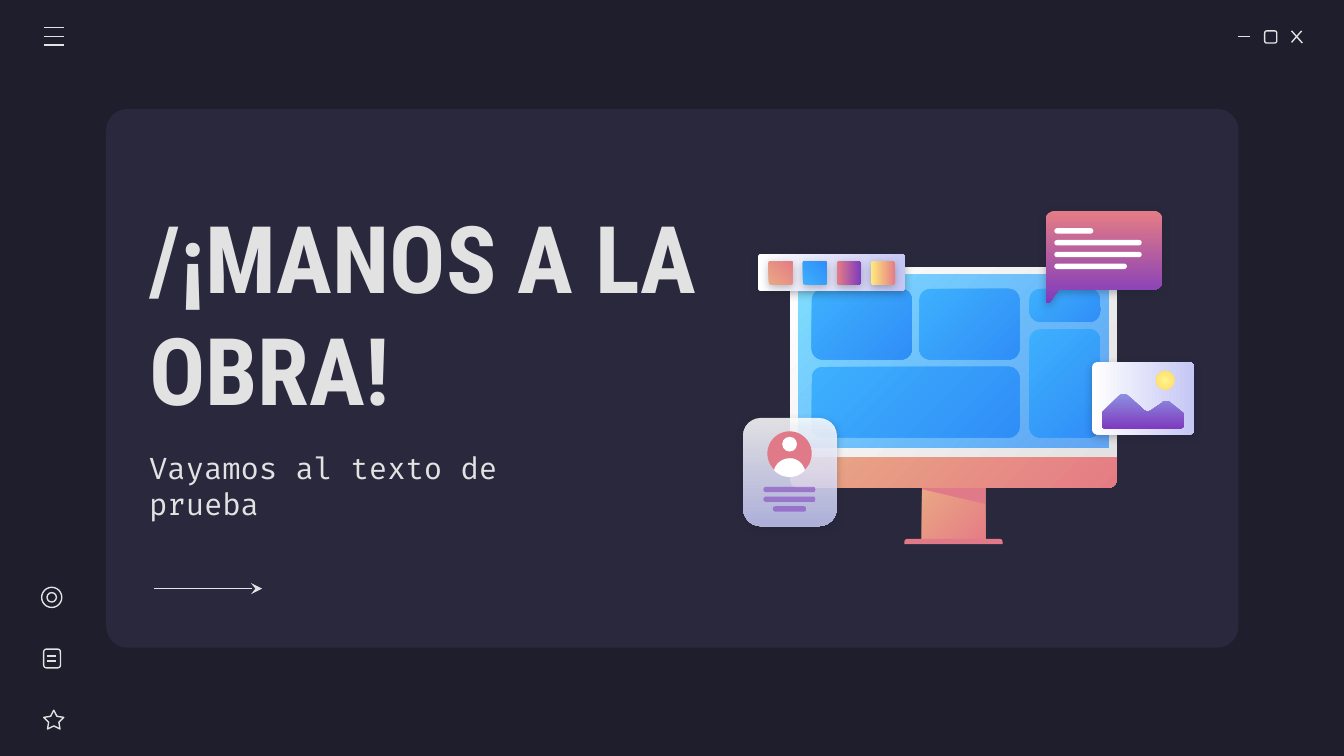
from dataclasses import dataclass
from lxml.etree import SubElement
from pptx import Presentation
from pptx.dml.color import RGBColor as RGB
from pptx.enum.shapes import MSO_CONNECTOR as LINK, MSO_SHAPE as S
from pptx.enum.text import MSO_ANCHOR as ANCHOR, MSO_AUTO_SIZE as FIT, PP_ALIGN as ALIGN
from pptx.oxml.ns import qn
from pptx.util import Inches, Pt


@dataclass(frozen=True)
class Theme:
    ground: str = "1E1E2C"
    panel: str = "29283D"
    ink: str = "E2E2E2"
    white: str = "FFFFFF"
    rose: str = "E07A88"
    violet: str = "7E3BBE"
    coral: tuple = ("E9A984", "E57C85")
    blue: tuple = ("3DB0FD", "308EF7")
    sunset: tuple = ("E57C85", "7E3BBE")
    paper: tuple = ("FFFFFF", "C5C7F4")
    screen: tuple = ("80DFFF", "318FFA")
    hills: tuple = ("8D90E1", "7E3BBE")
    sun: tuple = ("FFF68E", "FFD966")
    dawn: tuple = ("FFEA7D", "E57C85")
    title_font: str = "Roboto Condensed"
    body_font: str = "Fira Code"
    title_size: int = 50
    body_size: int = 16
    stroke: float = 0.75


@dataclass(frozen=True)
class Blend:
    colors: tuple
    angle: int = 45
    alphas: tuple = (100, 100)
    radial: bool = False


T = Theme()
COLS, ROWS = 1000, 562.5
CELL = Inches(10) / COLS

TITLE = ("/¡MANOS A LA OBRA!", (101, 144, 447, 176), T.title_font, T.title_size, True)
SUBTITLE = ("Vayamos al texto de prueba", (101, 338.5, 324, 46), T.body_font, T.body_size, False)

PANEL = (79, 81, 842.5, 401)
MENU = [(32.5, y, 47.5, y) for y in (20.5, 27, 33.5)]
CONTROLS = [(921, 27, 930, 27), (961, 23, 969, 32), (968.5, 23, 961, 31.5)]
NOTE_LINES = [(35, y, 42, y) for y in (488, 492)]
ICONS = [
    (S.ROUNDED_RECTANGLE, (941, 23, 9, 9), 0.167),
    (S.STAR_5_POINT, (32.5, 528.5, 15, 14), 0.254),
    (S.ROUNDED_RECTANGLE, (32.5, 483, 12.5, 14), 0.167),
    (S.OVAL, (31, 437, 15, 15), None),
    (S.OVAL, (35, 441, 7, 7), None),
]
ARROW = (114.5, 438, 195, 438)

TILES = [(604, 215, 74.5, 52.5), (604, 273, 154.5, 52.5), (684, 215, 74.5, 52.5),
         (766, 215, 52.5, 24.5), (766, 245, 52.5, 80.5)]
BUBBLE = [(785, 157), (781, 157, 778, 160, 778, 164), (778, 224),
          (778, 225.5, 780, 226, 781, 225), (788, 215.5), (859, 215.5),
          (862, 215.5, 865, 212, 865, 209), (865, 164), (865, 160, 862, 157, 859, 157)]
BUST = [(588, 341), (582, 341, 577, 345, 576, 350), (579, 353, 583, 355, 588, 355),
        (592, 355, 596, 353, 599, 350), (598, 345, 593, 341, 588, 341)]
HILLS = [(836, 293), (835, 293, 834, 293, 833, 294), (821, 306), (820, 307, 820, 307, 820, 308),
         (820, 316), (820, 318, 821, 319, 823, 319), (877, 319), (879, 319, 881, 318, 881, 316),
         (881, 309), (881, 308, 880, 307, 880, 307), (870, 299), (869, 298.5, 868, 298.5, 867, 298.5),
         (866, 298.5, 865, 299, 865, 299.5), (857, 305), (856, 306, 855, 306, 854, 306),
         (853, 306, 852, 306, 851, 305), (839, 294), (838, 293, 837, 293, 836, 293)]
NECK = [(686, 361), (686, 404), (733, 404), (733, 361)]
NECK_SHADE = [(686, 361), (686, 364), (733, 375), (733, 361)]
BUBBLE_WIDTHS = (29, 65, 65, 54)
CARD_WIDTHS = (39, 39, 25)
SWATCHES = [Blend(T.coral, 315), Blend(T.blue, 315), Blend(T.sunset, 0), Blend(T.dawn, 0)]

deck = Presentation()
deck.slide_width, deck.slide_height = round(COLS * CELL), round(ROWS * CELL)
slide = deck.slides.add_slide(deck.slide_layouts[0])
slide.background.fill.solid()
slide.background.fill.fore_color.rgb = RGB.from_string(T.ground)


def emu(*cells):
    return [round(c * CELL) for c in cells]


def paint(shape, look, lifted=False):
    props = shape._element.spPr
    if isinstance(look, Blend):
        shape.fill.gradient()
        for stop, color in zip(shape.fill.gradient_stops, look.colors):
            stop.color.rgb = RGB.from_string(color)
        shape.fill.gradient_angle = -look.angle % 360
        grad = props.find(qn("a:gradFill"))
        for color, alpha in zip(grad.iter(qn("a:srgbClr")), look.alphas):
            if alpha < 100:
                SubElement(color, qn("a:alpha"), val=str(alpha * 1000))
        if look.radial:
            grad.remove(grad.find(qn("a:lin")))
            ring = SubElement(grad, qn("a:path"), path="circle")
            SubElement(ring, qn("a:fillToRect"), l="50000", t="50000", r="50000", b="50000")
    else:
        shape.fill.solid()
        shape.fill.fore_color.rgb = RGB.from_string(look)
    shape.line.fill.background()
    shape.shadow.inherit = False
    if lifted:
        cast = SubElement(props.find(qn("a:effectLst")), qn("a:outerShdw"), blurRad=str(Pt(4.5)),
                          dist=str(Pt(1.5)), dir="5400000", algn="bl", rotWithShape="0")
        tint = SubElement(cast, qn("a:srgbClr"), val=T.ground)
        SubElement(tint, qn("a:alpha"), val="30000")
    return shape


def block(box, look, radius=0, kind=S.ROUNDED_RECTANGLE, lifted=False):
    shape = slide.shapes.add_shape(kind, *emu(*box))
    if kind != S.OVAL:
        shape.adjustments[0] = radius / min(box[2:])
    return paint(shape, look, lifted)


def outline(steps, look, lifted=False):
    points = [steps[0]]
    for step in steps[1:]:
        if len(step) == 2:
            points.append(step)
            continue
        curve = [points[-1], step[:2], step[2:4], step[4:]]
        for t in (n / 8 for n in range(1, 9)):
            weights = ((1 - t) ** 3, 3 * t * (1 - t) ** 2, 3 * t * t * (1 - t), t ** 3)
            points.append(tuple(sum(w * p[axis] for w, p in zip(weights, curve)) for axis in (0, 1)))
    builder = slide.shapes.build_freeform(*emu(*points[0]))
    builder.add_line_segments([emu(*p) for p in points[1:]], close=True)
    return paint(builder.convert_to_shape(), look, lifted)


def stroke(shape):
    shape.line.color.rgb = RGB.from_string(T.ink)
    shape.line.width = Pt(T.stroke)
    return shape


def rule(ends):
    link = stroke(slide.shapes.add_connector(LINK.STRAIGHT, *emu(*ends)))
    SubElement(link._element.spPr, qn("a:effectLst"))
    return link


def write(holder, text, box, font, size, bold):
    holder.left, holder.top, holder.width, holder.height = emu(*box)
    frame = holder.text_frame
    frame.text, frame.word_wrap, frame.auto_size = text, True, FIT.NONE
    frame.vertical_anchor = ANCHOR.MIDDLE
    frame.margin_left = frame.margin_right = frame.margin_top = frame.margin_bottom = Inches(0.1)
    line = frame.paragraphs[0]
    line.alignment, line.space_before = ALIGN.LEFT, Pt(0)
    line.font.name, line.font.size, line.font.bold = font, Pt(size), bold
    line.font.color.rgb = RGB.from_string(T.ink)


headline, subline = slide.placeholders
write(headline, *TITLE)
write(subline, *SUBTITLE)
headline._element.addprevious(block(PANEL, T.panel, 16)._element)

outline(NECK, Blend(T.coral))
block((673, 401, 73, 4), T.rose, 2, S.ROUND_2_SAME_RECTANGLE)
outline(NECK_SHADE, T.rose)
chin = block((588, 339, 243, 24), Blend(T.coral), 0, S.ROUND_2_SAME_RECTANGLE)
chin.adjustments[1] = 0.25
block((588, 199, 243, 141), Blend((T.white, T.ink)), 6, S.ROUND_2_SAME_RECTANGLE)
block((594, 204.5, 231, 128.5), Blend(T.screen, alphas=(100, 72)))
for tile in TILES:
    block(tile, Blend(T.blue), 8)

outline(BUBBLE, Blend(T.sunset, 90), lifted=True)
for row, width in enumerate(BUBBLE_WIDTHS):
    block((784.5, 169.8 + 8.8 * row, width, 4), T.white, 2)

block((553, 311, 69.5, 80.5), Blend(T.paper, 90, (86, 86)), 13, lifted=True)
block((571, 321, 33, 33), T.rose, kind=S.OVAL)
block((582, 325, 11, 11), T.white, kind=S.OVAL)
outline(BUST, T.white)
for row, width in enumerate(CARD_WIDTHS):
    block((587.5 - width / 2, 362.3 + 7.2 * row, width, 4),
          Blend((T.violet, T.violet), alphas=(54, 54)), 2)

block((812.5, 269.5, 76, 54), Blend(T.paper, 0), 4, lifted=True)
outline(HILLS, Blend(T.hills, 90))
block((860, 276, 14, 14), Blend(T.sun, radial=True), kind=S.OVAL)

block((564, 189, 109.5, 27.5), Blend(T.paper, 0), 2, lifted=True)
for column, look in enumerate(SWATCHES):
    block((572 + 25.4 * column, 194.3, 17.8, 17.5), look, 1.3, lifted=True)

for kind, box, bend in ICONS:
    icon = slide.shapes.add_shape(kind, *emu(*box))
    icon.fill.background()
    icon.shadow.inherit = False
    if bend:
        icon.adjustments[0] = bend
    stroke(icon)
for ends in MENU + CONTROLS + NOTE_LINES:
    rule(ends)
arrow = rule(ARROW)
SubElement(arrow._element.spPr.find(qn("a:ln")), qn("a:tailEnd"), type="stealth")

deck.save("out.pptx")
